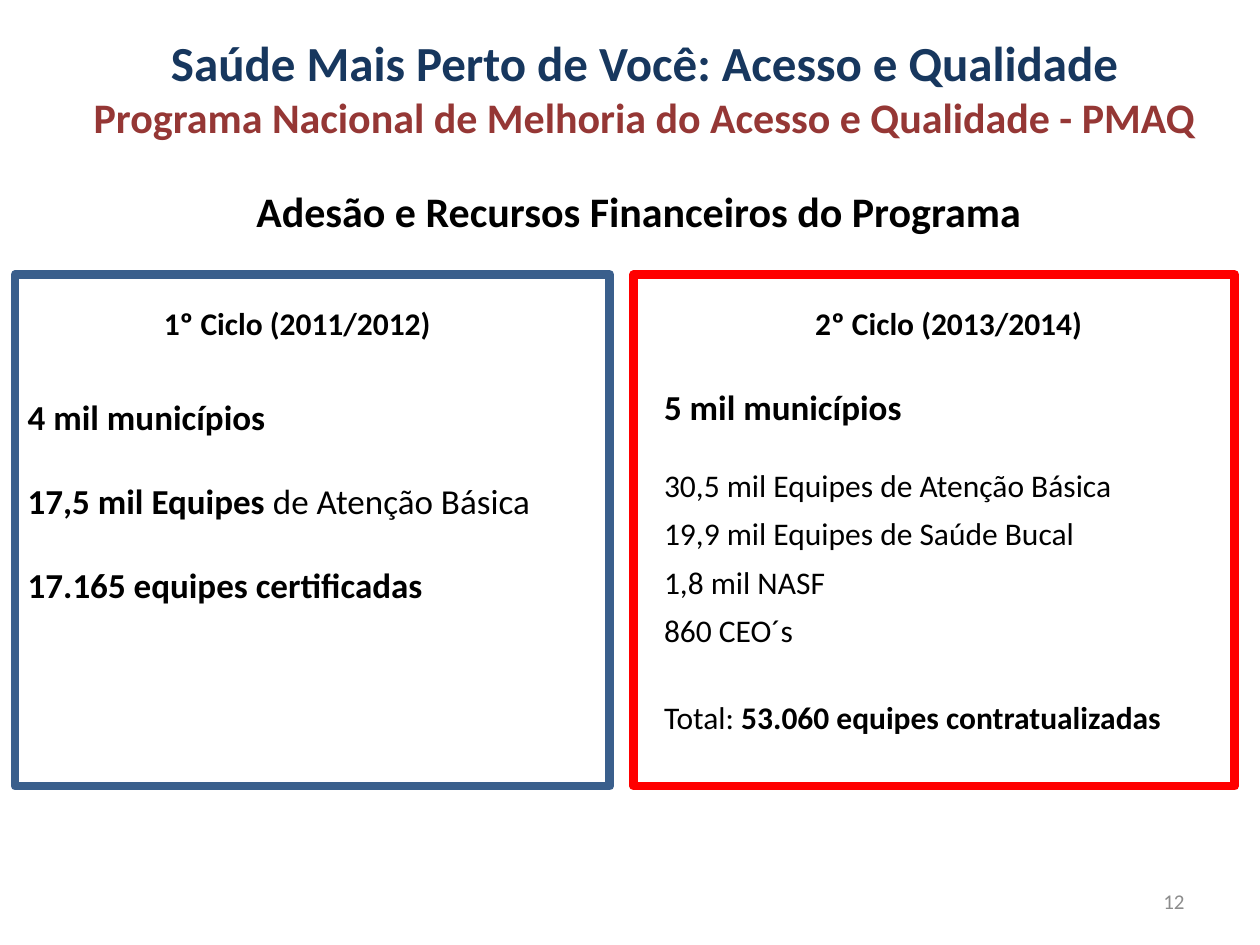
from pptx import Presentation
from pptx.dml.color import RGBColor
from pptx.enum.shapes import MSO_SHAPE
from pptx.enum.text import MSO_ANCHOR, MSO_AUTO_SIZE, PP_ALIGN
from pptx.oxml.xmlchemy import OxmlElement
from pptx.util import Inches, Pt

TITLE_LINES = [
    ([("Saúde Mais Perto de Você: Acesso e Qualidade", True)], 28, 0, "17375E"),
    ([("Programa Nacional de Melhoria do Acesso e Qualidade - PMAQ", True)], 24, 0, "953735"),
]
SUBTITLE_LINES = [([("Adesão e Recursos Financeiros do Programa", True)], 24, 0, "000000")]
NUMBER_LINES = [([("12", False)], 12, 0, "8C8C8C")]
FIRST_CYCLE_LINES = [
    ([("4 mil municípios", True)], 20, 0, "000000"),
    ([("17,5 mil Equipes ", True), ("de Atenção Básica", False)], 20, 24, "000000"),
    ([("17.165 equipes certificadas", True)], 20, 24, "000000"),
]
SECOND_CYCLE_LINES = [
    ([("5 mil municípios", True)], 20, 0, "000000"),
    ([("30,5 mil Equipes de Atenção Básica", False)], 18, 22, "000000"),
    ([("19,9 mil Equipes de Saúde Bucal", False)], 18, 6, "000000"),
    ([("1,8 mil NASF", False)], 18, 6, "000000"),
    ([("860 CEO´s", False)], 18, 6, "000000"),
    ([("Total: ", False), ("53.060 equipes contratualizadas", True)], 18, 28, "000000"),
]


def color(hex_string):
    return RGBColor.from_string(hex_string)


def place(shape, box):
    shape.left, shape.top, shape.width, shape.height = (Inches(length) for length in box)


def remove_bullet(paragraph):
    properties = paragraph._p.get_or_add_pPr()
    properties.set("marL", "0")
    properties.set("indent", "0")
    properties.append(OxmlElement("a:buNone"))


def write_lines(shape, box, lines, alignment=PP_ALIGN.LEFT, anchor=MSO_ANCHOR.TOP):
    place(shape, box)
    text_frame = shape.text_frame
    text_frame.word_wrap = True
    text_frame.auto_size = MSO_AUTO_SIZE.NONE
    text_frame.vertical_anchor = anchor
    text_frame.text = "\n".join("".join(text for text, _ in runs) for runs, *_ in lines)
    for paragraph, (runs, size, space_before, hex_string) in zip(text_frame.paragraphs, lines):
        remove_bullet(paragraph)
        paragraph.alignment = alignment
        paragraph.space_before = Pt(space_before)
        paragraph.text = ""
        for text, bold in runs:
            run = paragraph.add_run()
            run.text = text
            run.font.name = "Calibri"
            run.font.size = Pt(size)
            run.font.bold = bold
            run.font.color.rgb = color(hex_string)


def add_header(slide, box):
    left, top, width, height = box
    write_lines(slide.shapes.title, box, TITLE_LINES, PP_ALIGN.CENTER)
    subtitle = slide.shapes.add_textbox(0, 0, 0, 0)
    subtitle_box = (left + 0.67, top + 1.21, width - 1.43, 0.52)
    write_lines(subtitle, subtitle_box, SUBTITLE_LINES, PP_ALIGN.CENTER)


def add_cycle(slide, box, line_color, heading, heading_center, body_offset, lines, indexes):
    left, top, width, height = box
    frame = slide.shapes.add_shape(MSO_SHAPE.RECTANGLE, 0, 0, 0, 0)
    place(frame, box)
    frame.shadow.inherit = False
    frame.fill.background()
    frame.line.color.rgb = color(line_color)
    frame.line.width = Pt(5)
    heading_index, body_index = indexes
    heading_box = (left + heading_center - 1.5, top + 0.18, 3, 0.4)
    heading_lines = [([(heading, True)], 18, 0, "000000")]
    write_lines(slide.placeholders[heading_index], heading_box, heading_lines, PP_ALIGN.CENTER)
    offset_x, offset_y = body_offset
    body_box = (left + offset_x, top + offset_y, width - offset_x, height - offset_y)
    write_lines(slide.placeholders[body_index], body_box, lines)


def add_slide_number(slide, box):
    number = slide.shapes.add_textbox(0, 0, 0, 0)
    write_lines(number, box, NUMBER_LINES, PP_ALIGN.RIGHT, MSO_ANCHOR.MIDDLE)


def main():
    presentation = Presentation()
    presentation.slide_width = Inches(10)
    presentation.slide_height = Inches(7.5)
    slide = presentation.slides.add_slide(presentation.slide_layouts.get_by_name("Comparison"))
    add_header(slide, (0.51, 0.21, 9.21, 0.98))
    add_cycle(slide, (0.12, 2.18, 4.72, 4.06), "3A5F8C", "1º Ciclo (2011/2012)",
              2.24, (0, 0.91), FIRST_CYCLE_LINES, (1, 2))
    add_cycle(slide, (5.03, 2.18, 4.77, 4.06), "FF0000", "2º Ciclo (2013/2014)",
              2.5, (0.14, 0.83), SECOND_CYCLE_LINES, (3, 4))
    add_slide_number(slide, (7.17, 6.95, 2.33, 0.4))
    presentation.save("out.pptx")


if __name__ == "__main__":
    main()
